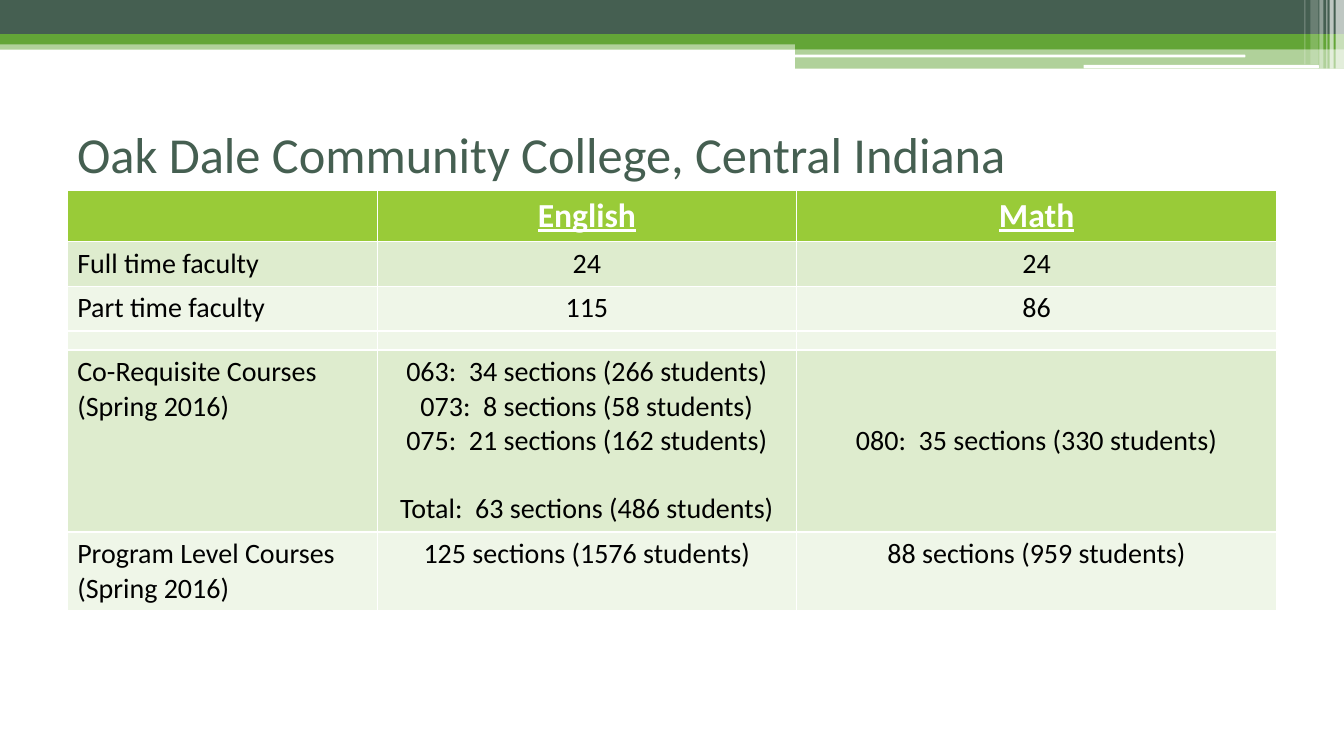
from typing import NamedTuple

from lxml import etree
from pptx import Presentation
from pptx.dml.color import RGBColor
from pptx.enum.shapes import MSO_SHAPE
from pptx.enum.text import MSO_ANCHOR, PP_ALIGN
from pptx.oxml.ns import qn
from pptx.util import Pt

RECT, ROUND = MSO_SHAPE.RECTANGLE, MSO_SHAPE.ROUNDED_RECTANGLE
LEFT, MID = PP_ALIGN.LEFT, PP_ALIGN.CENTER
TOP, CENTER = MSO_ANCHOR.TOP, MSO_ANCHOR.MIDDLE

SLATE, GREEN, WHITE, BLACK = "455F51", "63A537", "FFFFFF", "000000"
LIME, SAGE, MIST = "99CB38", "DEECCE", "EFF6E8"
HEAD = {"size": Pt(24), "bold": True, "underline": True, "name": "Calibri"}
BODY = {"size": Pt(20), "bold": False, "underline": False, "name": "Calibri"}
TITLE = {"size": Pt(36), "name": "Calibri"}
EDGE, WIDE = 48, 864
COLS = (221.5, 299.5, 343)
LINE = 24.4


class Bar(NamedTuple):
    x: float
    y: float
    w: float
    h: float
    hue: str
    alpha: int = 100
    kind: int = RECT


class Row(NamedTuple):
    high: float
    fill: str
    cells: tuple[str, str, str] = ("", "", "")
    font: dict = BODY
    hue: str = BLACK


BARS = [
    Bar(0, 28.8, 960, 6.6, GREEN, 50),
    Bar(0, 0, 960, 24.5, SLATE),
    Bar(0, 24.5, 960, 7.2, GREEN),
    Bar(568, 28, 392, 7.2, GREEN),
    Bar(568, 34.8, 392, 14.2, GREEN, 50),
    Bar(567.5, 39, 322, 2, WHITE, kind=ROUND),
    Bar(774, 46.3, 168, 2.6, WHITE, kind=ROUND),
    Bar(954, 0, 6, 49, WHITE, 65),
    Bar(949.7, 0, 2.9, 49, WHITE, 65),
    Bar(947.5, 0, 0.7, 49, WHITE, 60),
    Bar(942.5, 0, 2.9, 49, WHITE, 40),
    Bar(936, 0, 5.8, 46, WHITE, 20),
    Bar(931.7, 0, 0.7, 46, WHITE, 30),
]
STAFF = [
    Row(36.5, LIME, ("", "English", "Math"), HEAD, WHITE),
    Row(32, SAGE, ("Full time faculty", "24", "24")),
    Row(32, MIST, ("Part time faculty", "115", "86")),
]
COURSES = [
    Row(32, MIST),
    Row(130, SAGE, (
        "Co-Requisite Courses\n(Spring 2016)",
        "063:  34 sections (266 students)\n073:  8 sections (58 students)\n"
        "075:  21 sections (162 students)\nTotal:  63 sections (486 students)",
        "080:  35 sections (330 students)")),
    Row(56, MIST, (
        "Program Level Courses\n(Spring 2016)",
        "125 sections (1576 students)",
        "88 sections (959 students)")),
]


def paint(fill, hue: str, alpha: int = 100) -> None:
    fill.solid()
    fill.fore_color.rgb = RGBColor.from_string(hue)
    if alpha < 100:
        color = fill._xPr.find(qn("a:solidFill"))[0]
        etree.SubElement(color, qn("a:alpha"), val=str(alpha * 1000))


def style(font, form: dict, hue: str) -> None:
    for key, value in form.items():
        setattr(font, key, value)
    paint(font.fill, hue)


def draw_bar(slide, bar: Bar) -> None:
    box = slide.shapes.add_shape(bar.kind, Pt(bar.x), Pt(bar.y), Pt(bar.w), Pt(bar.h))
    box.shadow.inherit = False
    box.line.fill.background()
    paint(box.fill, bar.hue, bar.alpha)


def draw_title(slide, text: str) -> None:
    frame = slide.shapes.add_textbox(Pt(EDGE), Pt(88), Pt(WIDE), Pt(84)).text_frame
    frame.word_wrap = True
    frame.vertical_anchor = TOP
    frame.margin_top = 0
    para = frame.paragraphs[0]
    para.text = text
    style(para.runs[0].font, TITLE, SLATE)


def fill_cell(cell, row: Row, text: str, align: int) -> None:
    paint(cell.fill, row.fill)
    cell.text = text
    for para in cell.text_frame.paragraphs:
        para.alignment = align
        style(para.font, row.font, row.hue)
        for run in para.runs:
            style(run.font, row.font, row.hue)
        # The total stands one line apart
        if para.text.startswith("Total"):
            para.space_before = Pt(LINE)


def draw_table(slide, top: float, rows: list[Row]):
    high = sum(row.high for row in rows)
    grid = slide.shapes.add_table(
        len(rows), len(COLS), Pt(EDGE), Pt(top), Pt(WIDE), Pt(high)).table
    for col, width in zip(grid.columns, COLS):
        col.width = Pt(width)
    for r, row in enumerate(rows):
        grid.rows[r].height = Pt(row.high)
        for c, text in enumerate(row.cells):
            fill_cell(grid.cell(r, c), row, text, MID if c else LEFT)
    return grid


def main() -> None:
    deck = Presentation()
    deck.slide_width, deck.slide_height = Pt(960), Pt(540)
    slide = deck.slides.add_slide(deck.slide_layouts[6])

    # Banner
    for bar in BARS:
        draw_bar(slide, bar)

    # Courses lie below the title and the staff table
    courses = draw_table(slide, 218, COURSES)
    courses.cell(1, 2).vertical_anchor = CENTER
    draw_title(slide, "Oak Dale Community College, Central Indiana")
    draw_table(slide, 136, STAFF)

    deck.save("out.pptx")


if __name__ == "__main__":
    main()
